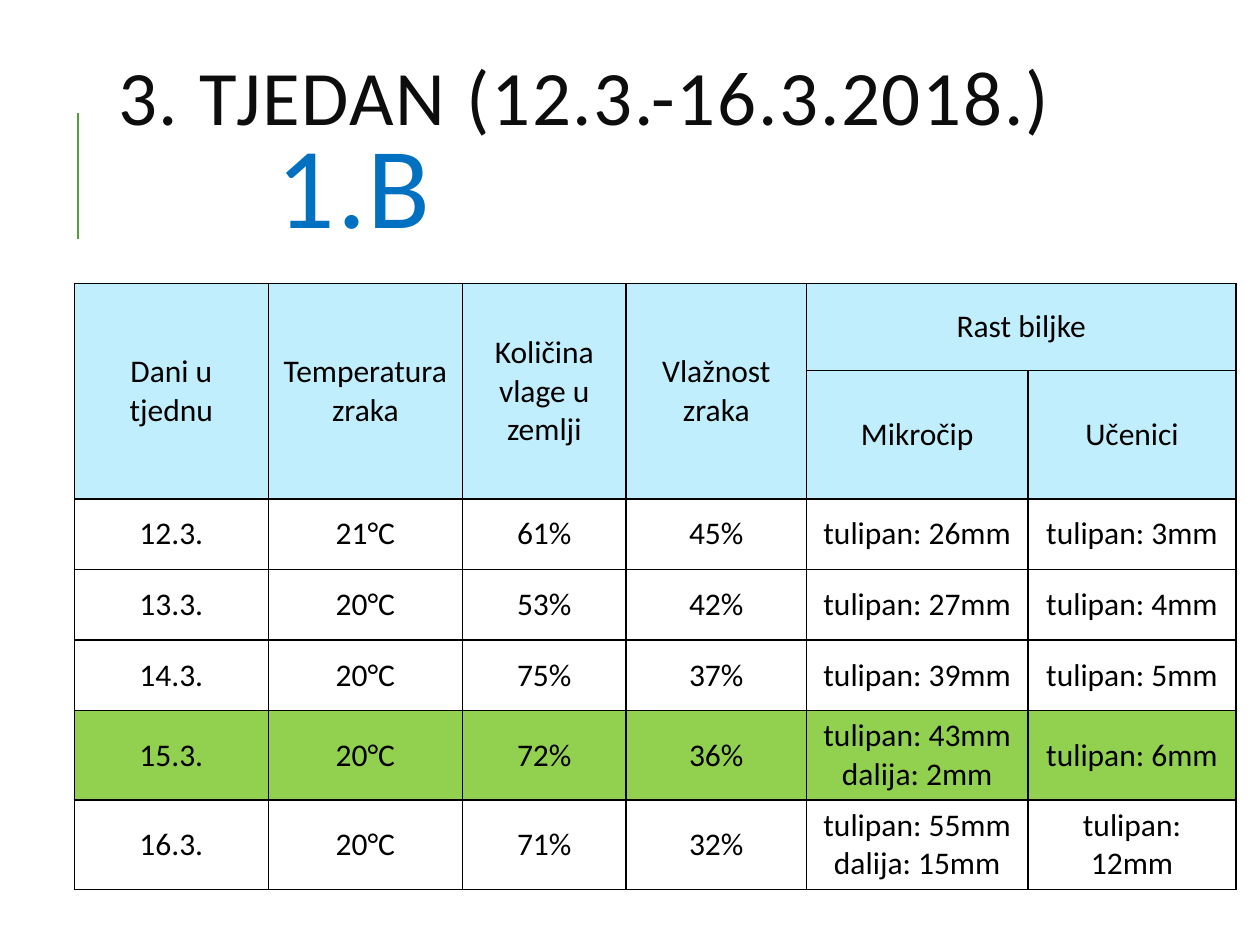
import pptx
import pptx.util
import pptx.dml.color
import pptx.enum.shapes
import pptx.enum.text
import pptx.oxml
import pptx.oxml.ns
import lxml.etree

Inches, Pt = pptx.util.Inches, pptx.util.Pt
MIDDLE = pptx.enum.text.MSO_ANCHOR.MIDDLE
CENTER = pptx.enum.text.PP_ALIGN.CENTER
qn = pptx.oxml.ns.qn


def rgb(value):
    return pptx.dml.color.RGBColor.from_string(value)


def add_run(p, text, size, color):
    r = p.add_run()
    r.text = text
    for name, value in {"name": "Calibri", "size": Pt(size)}.items():
        setattr(r.font, name, value)
    r.font.color.rgb = rgb(color)
    return r


prs = pptx.Presentation()
prs.slide_width, prs.slide_height = Inches(10), Inches(7.5)
s = prs.slides.add_slide(prs.slide_layouts[6])

# Green accent line beside the title
line = s.shapes.add_connector(pptx.enum.shapes.MSO_CONNECTOR.STRAIGHT,
                              Inches(0.62), Inches(1.9), Inches(0.62), Inches(0.9))
line.line.color.rgb = rgb("549E39")
line.line.width = Pt(1.5)
lxml.etree.SubElement(line._element.spPr, qn("a:effectLst"))

# Title, with the class name indented on its own line
sp = s.shapes.add_textbox(Inches(0.84), Inches(0.44), Inches(7.97), Inches(1.64))
tf = sp.text_frame
for name, value in {"word_wrap": True, "vertical_anchor": MIDDLE}.items():
    setattr(tf, name, value)
title = [("3. TJEDAN (12.3.-16.3.2018.)", 44, "0D0D0D", 0),
         ("1.B", 66, "0070C0", 1.26)]
for i, (text, size, color, indent) in enumerate(title):
    p = tf.add_paragraph() if i else tf.paragraphs[0]
    p.line_spacing = 0.8
    p._p.get_or_add_pPr().set("marL", str(Inches(indent)))
    r = add_run(p, text, size, color)
    r._r.get_or_add_rPr().set("spc", "100")

# Table of weekly measurements
rows = [
    ["Dani u tjednu", "Temperatura zraka", "Količina vlage u zemlji", "Vlažnost zraka",
     "Rast biljke", ""],
    ["", "", "", "", "Mikročip", "Učenici"],
    ["12.3.", "21°C", "61%", "45%", "tulipan: 26mm", "tulipan: 3mm"],
    ["13.3.", "20°C", "53%", "42%", "tulipan: 27mm", "tulipan: 4mm"],
    ["14.3.", "20°C", "75%", "37%", "tulipan: 39mm", "tulipan: 5mm"],
    ["15.3.", "20°C", "72%", "36%", "tulipan: 43mm\ndalija: 2mm", "tulipan: 6mm"],
    ["16.3.", "20°C", "71%", "32%", "tulipan: 55mm\ndalija: 15mm", "tulipan: 12mm"],
]
row_fills = ["C1EEFC"] * 2 + ["FFFFFF"] * 3 + ["92D050", "FFFFFF"]
widths = [1.54, 1.54, 1.3, 1.43, 1.76, 1.65]
heights = [0.69, 1.02, 0.56, 0.56, 0.56, 0.71, 0.71]

table = s.shapes.add_table(len(rows), len(widths), Inches(0.59), Inches(2.25),
                           Inches(sum(widths)), Inches(sum(heights))).table
for col, width in zip(table.columns, widths):
    col.width = Inches(width)
for row, height in zip(table.rows, heights):
    row.height = Inches(height)

# Header spans
for c in range(4):
    table.cell(0, c).merge(table.cell(1, c))
table.cell(0, 4).merge(table.cell(0, 5))

# Cell text, borders and fills
for i, values in enumerate(rows):
    for j, text in enumerate(values):
        cell = table.cell(i, j)
        cell.vertical_anchor = MIDDLE
        if text:
            for k, part in enumerate(text.split("\n")):
                tf = cell.text_frame
                p = tf.add_paragraph() if k else tf.paragraphs[0]
                p.alignment = CENTER
                add_run(p, part, 18, "000000")
        tcPr = cell._tc.get_or_add_tcPr()
        for side in ("lnL", "lnR", "lnT", "lnB"):
            ln = lxml.etree.SubElement(tcPr, qn("a:" + side), w=str(Pt(1)))
            fill = lxml.etree.SubElement(ln, qn("a:solidFill"))
            lxml.etree.SubElement(fill, qn("a:srgbClr"), val="000000")
        cell.fill.solid()
        cell.fill.fore_color.rgb = rgb(row_fills[i])

prs.save("out.pptx")
